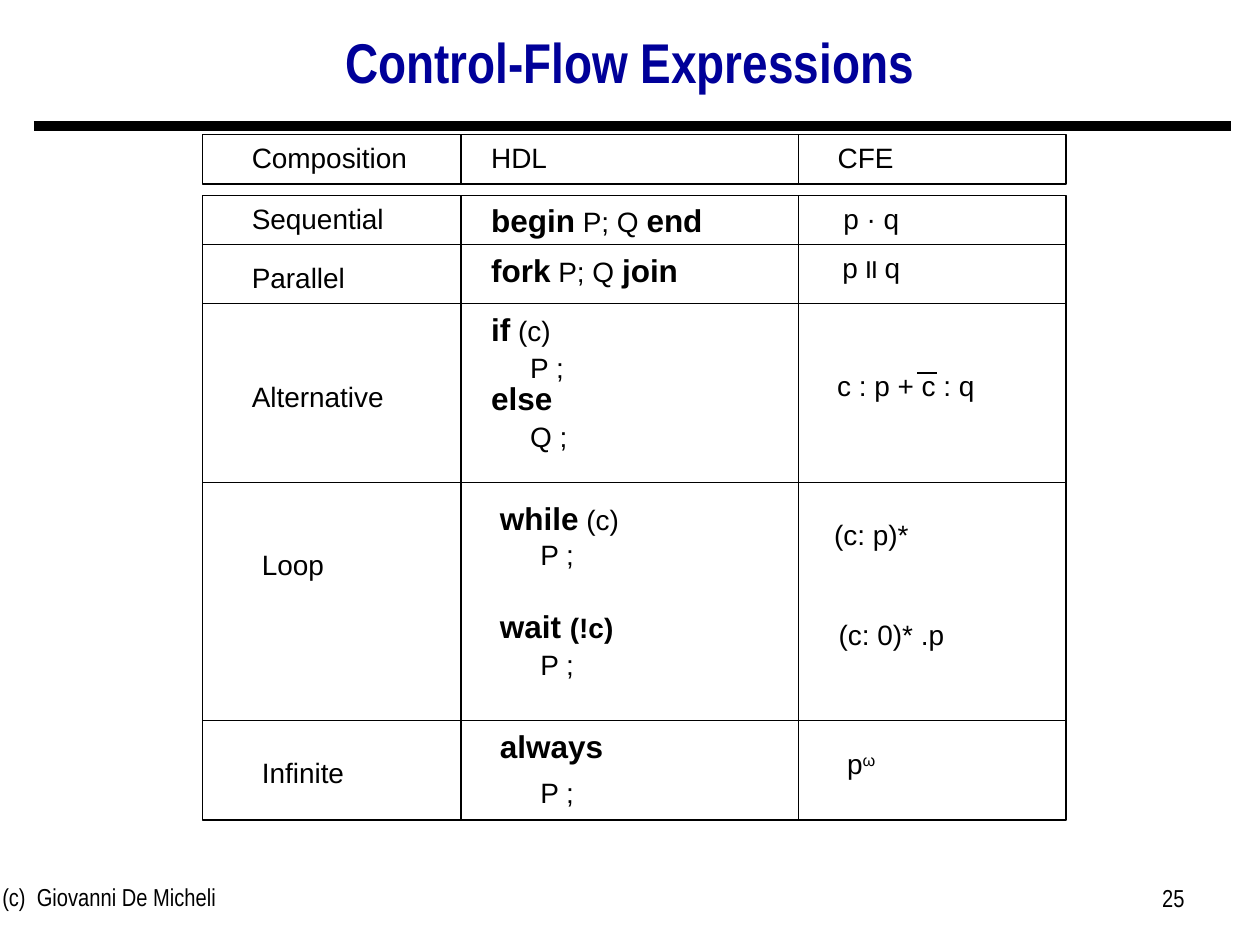
from dataclasses import dataclass

from lxml.etree import SubElement
from pptx import Presentation
from pptx.dml.color import RGBColor
from pptx.enum.shapes import MSO_CONNECTOR, MSO_SHAPE
from pptx.enum.text import MSO_ANCHOR, MSO_AUTO_SIZE, PP_ALIGN
from pptx.oxml.ns import qn
from pptx.util import Inches, Pt


@dataclass(frozen=True)
class Theme:
    ink: RGBColor = RGBColor(0, 0, 0)
    title_ink: RGBColor = RGBColor(0, 0, 0x99)
    body_font: str = "Arial"
    narrow_font: str = "Arial Narrow"
    title_size: int = 32
    keyword_size: int = 18
    body_size: int = 16
    footer_size: int = 14
    grid_width: float = 0.75
    rule_width: float = 6


THEME = Theme()


def plain(text, **style):
    return text, style


def keyword(text):
    return plain(text, bold=True, size=THEME.keyword_size)


def add_text(page, box, spans, *, size=THEME.body_size, font=THEME.body_font,
             color=THEME.ink, bold=False, align=PP_ALIGN.LEFT,
             anchor=MSO_ANCHOR.TOP, line_spacing=None, hanging=False):
    shape = page.shapes.add_textbox(*map(Inches, box))
    frame = shape.text_frame
    frame.word_wrap = True
    frame.vertical_anchor = anchor
    para = frame.paragraphs[0]
    para.alignment = align
    if line_spacing:
        para.line_spacing = line_spacing
    if hanging:
        frame.auto_size = MSO_AUTO_SIZE.SHAPE_TO_FIT_TEXT
        properties = para._p.get_or_add_pPr()
        properties.set("marL", str(Inches(1.25)))
        properties.set("indent", str(Inches(-0.25)))
    for text, style in spans:
        span = para.add_run()
        span.text = text
        span.font.name = font
        span.font.size = Pt(style.get("size", size))
        span.font.bold = style.get("bold", bold)
        span.font.color.rgb = color
        if style.get("superscript"):
            span._r.get_or_add_rPr().set("baseline", "30000")


def add_line(page, start, end, width=THEME.grid_width):
    line = page.shapes.add_connector(
        MSO_CONNECTOR.STRAIGHT, *map(Inches, (*start, *end)))
    line.line.color.rgb = THEME.ink
    line.line.width = Pt(width)
    SubElement(line._element.spPr, qn("a:effectLst"))


def add_frame(page, box):
    frame = page.shapes.add_shape(MSO_SHAPE.RECTANGLE, *map(Inches, box))
    frame.shadow.inherit = False
    frame.fill.background()
    frame.line.color.rgb = THEME.ink
    frame.line.width = Pt(THEME.grid_width)


def add_heading(page, box):
    left, top, width, height = box
    add_line(page, (left - 0.48, top + 1.11), (left + width + 0.52, top + 1.11),
             THEME.rule_width)
    add_text(page, box, [plain("Control-Flow Expressions")],
             size=THEME.title_size, font=THEME.narrow_font,
             color=THEME.title_ink, bold=True, align=PP_ALIGN.CENTER,
             anchor=MSO_ANCHOR.MIDDLE, line_spacing=0.9)


def add_footer(page, box):
    left, top, width, height = box
    style = {"size": THEME.footer_size, "font": THEME.narrow_font}
    add_text(page, (left, top, 3.17, height),
             [plain("(c)  Giovanni De Micheli")], **style)
    add_text(page, (left + width - 2.33, top + 0.01, 2.33, height),
             [plain("25")], align=PP_ALIGN.RIGHT, **style)


def add_grid(page, box):
    left, top, width, height = box
    header_height, body_offset = 0.39, 0.48
    right, bottom, body_top = left + width, top + height, top + body_offset
    add_frame(page, (left, top, width, header_height))
    add_frame(page, (left, body_top, width, height - body_offset))
    for row in (0.87, 1.34, 2.76, 4.65):
        add_line(page, (left, top + row), (right, top + row))
    for column in (2.05, 4.73):
        x = left + column
        add_line(page, (x, top), (x, top + header_height))
        add_line(page, (x, body_top), (x, bottom))


def add_entries(page, box, entries, width, align=PP_ALIGN.LEFT):
    left, top = box[:2]
    for x, y, *spans in entries:
        large = any(style.get("size") == THEME.keyword_size for text, style in spans)
        add_text(page, (left + x, top + y, width, 0.4 if large else 0.37),
                 spans, align=align, hanging=True)


def add_expression_table(page, box):
    add_grid(page, box)
    labels = [
        (-0.71, 0, plain("Composition")),
        (-0.71, 0.48, plain("Sequential")),
        (-0.71, 0.95, plain("Parallel")),
        (-0.71, 1.89, plain("Alternative")),
        (-0.63, 3.23, plain("Loop")),
        (-0.63, 4.88, plain("Infinite")),
        (1.19, 0, plain("HDL")),
        (3.94, 0, plain("CFE")),
    ]
    code = [
        (1.19, 0.48, keyword("begin"), plain(" P; Q "), keyword("end")),
        (1.19, 0.87, keyword("fork"), plain(" P; Q "), keyword("join")),
        (1.19, 1.34, keyword("if"), plain(" (c)")),
        (1.5, 1.66, plain("P ;")),
        (1.19, 1.89, keyword("else")),
        (1.5, 2.21, plain("Q ;")),
        (1.26, 2.84, keyword("while"), plain(" (c)")),
        (1.58, 3.15, plain("P ;")),
        (1.26, 3.7, keyword("wait "), plain("(!c)", bold=True)),
        (1.58, 4.02, plain("P ;")),
        (1.26, 4.65, keyword("always")),
        (1.58, 5.04, plain("P ;")),
    ]
    expressions = [
        (3.78, 0.48, plain("p · q")),
        (3.78, 0.87, plain("p װ q")),
        (3.78, 2.99, plain("(c: p)*")),
        (3.94, 3.78, plain("(c: 0)* .p")),
        (3.7, 4.81, plain("p"), plain("ω", superscript=True)),
    ]
    alternative = [(3.78, 1.81, plain("c : p + c : q"))]
    add_entries(page, box, labels, 2.68)
    add_entries(page, box, code, 3.23)
    add_entries(page, box, expressions, 2.05, PP_ALIGN.CENTER)
    add_entries(page, box, alternative, 2.6, PP_ALIGN.CENTER)
    left, top = box[:2]
    add_line(page, (left + 5.67, top + 1.89), (left + 5.83, top + 1.89))


def main():
    deck = Presentation()
    deck.slide_width, deck.slide_height = Inches(10), Inches(7.5)
    page = deck.slides.add_slide(deck.slide_layouts[6])
    add_heading(page, (0.75, -0.11, 8.5, 1.25))
    add_footer(page, (-0.08, 6.95, 9.58, 0.52))
    add_expression_table(page, (1.61, 1.07, 6.85, 5.44))
    deck.save("out.pptx")


if __name__ == "__main__":
    main()
